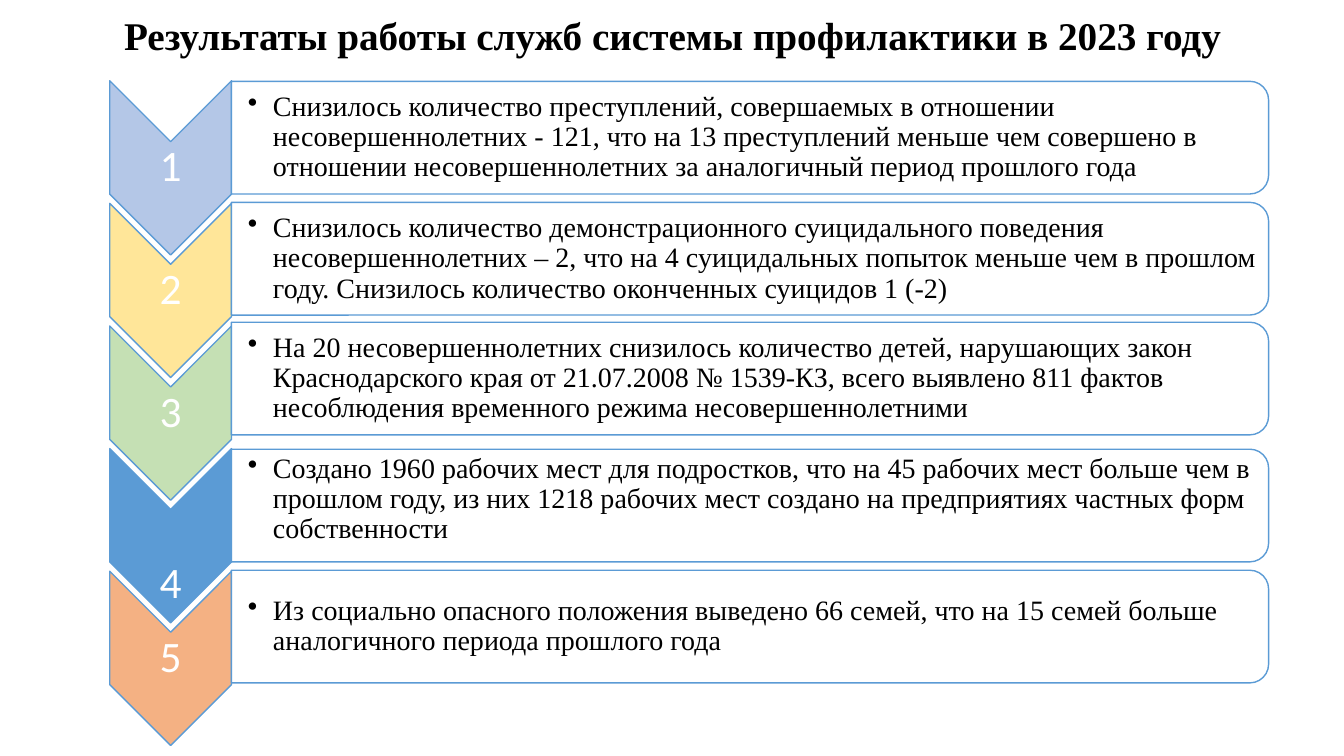
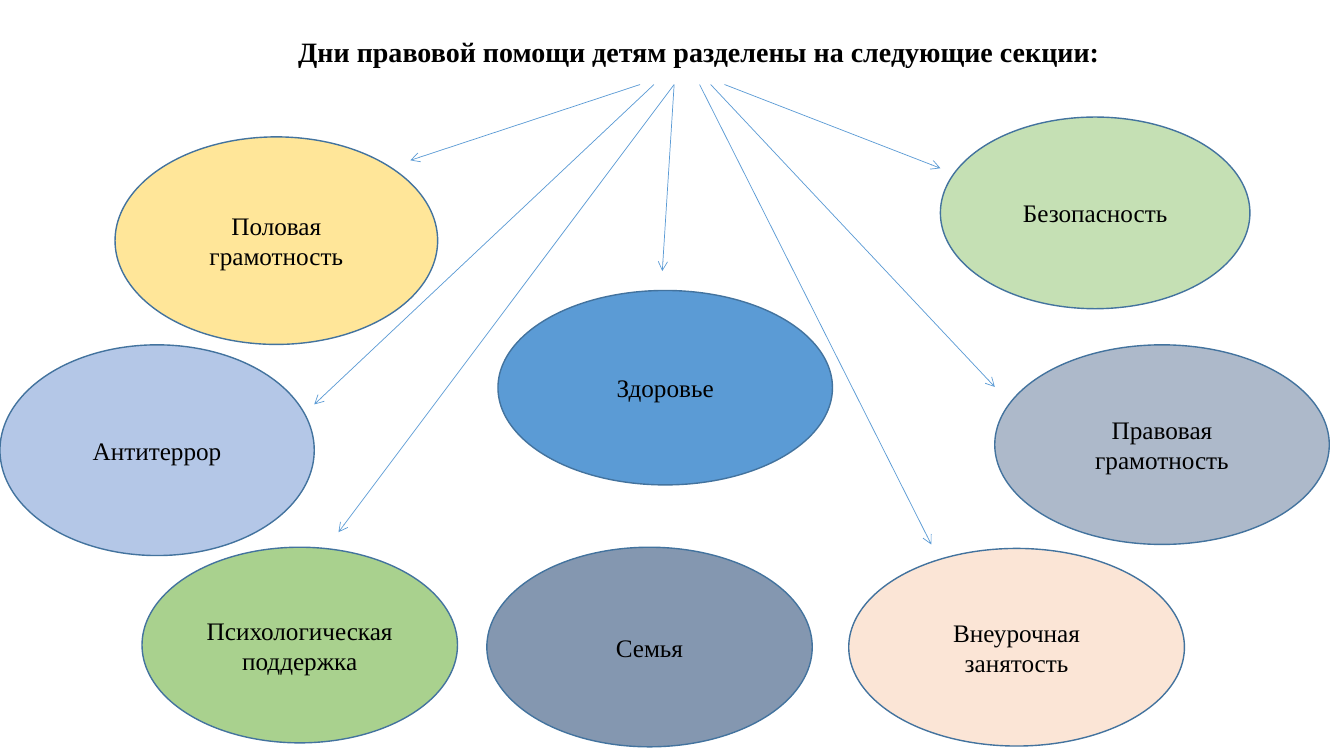
import dataclasses
import typing

import lxml.etree
import pptx
import pptx.dml.color
import pptx.enum.shapes
import pptx.enum.text
import pptx.oxml.ns
import pptx.util

Cm = pptx.util.Cm
Pt = pptx.util.Pt
Shape = pptx.enum.shapes.MSO_SHAPE
Align = pptx.enum.text.PP_ALIGN
Anchor = pptx.enum.text.MSO_ANCHOR
qualified = pptx.oxml.ns.qn


@dataclasses.dataclass(frozen=True)
class Theme:
    text_font: str = "Times New Roman"
    number_font: str = "Calibri"
    black: str = "000000"
    white: str = "FFFFFF"
    blue: str = "5B9BD5"
    dark_blue: str = "43739E"
    lavender: str = "B4C7E7"
    yellow: str = "FFE699"
    light_green: str = "C5E0B4"
    green: str = "A9D18E"
    orange: str = "F4B183"
    peach: str = "FBE5D6"
    light_slate: str = "ADB9CA"
    slate: str = "8497B0"
    title_size: float = 28
    body_size: float = 20
    number_size: float = 31
    section_size: float = 18
    outline_width: float = 1
    arrow_width: float = 0.5


THEME = Theme()


class Box(typing.NamedTuple):
    left: float
    top: float
    width: float
    height: float

    def lengths(self) -> list[pptx.util.Length]:
        return [Cm(value) for value in self]


def centred_box(x: float, y: float, width: float, height: float) -> Box:
    return Box(x - width / 2, y - height / 2, width, height)


class TextStyle(typing.NamedTuple):
    size: float
    font: str = THEME.text_font
    color: str = THEME.black
    bold: bool = False
    alignment: Align = Align.CENTER
    line_spacing: float = 1.0
    insets: tuple[float, float, float, float] = (0.25, 0.13, 0.25, 0.13)
    bullet_indent: float = 0


TITLE = TextStyle(THEME.title_size, bold=True, line_spacing=0.9)
SUBTITLE = TextStyle(THEME.body_size, bold=True)
SECTION = TextStyle(THEME.section_size)
NUMBER = TextStyle(THEME.number_size, THEME.number_font, THEME.white,
                   line_spacing=0.9, insets=(0.05, 0.05, 0.05, 0.05))
RESULT = TextStyle(THEME.body_size, alignment=Align.LEFT, line_spacing=0.9,
                   insets=(0.41, 0.03, 0.03, 0.03), bullet_indent=0.63)


class Result(typing.NamedTuple):
    text: str
    color: str
    card_y: float
    number_shift: float = 0
    text_shift: float = 0


class Section(typing.NamedTuple):
    text: str
    color: str
    box: Box


class Arrow(typing.NamedTuple):
    start_x: float
    end_x: float
    end_y: float


RESULTS = [
    Result("Снизилось количество преступлений, совершаемых в отношении "
           "несовершеннолетних - 121, что на 13 преступлений меньше чем совершено в "
           "отношении несовершеннолетних за аналогичный период прошлого года",
           THEME.lavender, 3.47),
    Result("Снизилось количество демонстрационного суицидального поведения "
           "несовершеннолетних – 2, что на 4 суицидальных попыток меньше чем в прошлом "
           "году. Снизилось количество оконченных суицидов 1 (-2)",
           THEME.yellow, 6.52),
    Result("На 20 несовершеннолетних снизилось количество детей, нарушающих закон "
           "Краснодарского края от 21.07.2008 № 1539-КЗ, всего выявлено 811 фактов "
           "несоблюдения временного режима несовершеннолетними",
           THEME.light_green, 9.54),
    Result("Создано 1960 рабочих мест для подростков, что на 45 рабочих мест больше чем в "
           "прошлом году, из них 1218 рабочих мест создано на предприятиях частных форм "
           "собственности",
           THEME.blue, 12.74, number_shift=1.23, text_shift=-0.15),
    Result("Из социально опасного положения выведено 66 семей, что на 15 семей больше "
           "аналогичного периода прошлого года",
           THEME.orange, 15.79),
]

SECTIONS = [
    Section("Безопасность", THEME.light_green, Box(23.7, 2.95, 7.8, 4.83)),
    Section("Правовая грамотность", THEME.light_slate, Box(25.07, 8.69, 8.43, 5.03)),
    Section("Внеурочная занятость", THEME.peach, Box(21.39, 13.82, 8.46, 4.98)),
    Section("Здоровье", THEME.blue, Box(12.55, 7.32, 8.43, 4.9)),
    Section("Семья", THEME.slate, Box(12.27, 13.79, 8.2, 5.03)),
    Section("Половая грамотность", THEME.yellow, Box(2.9, 3.45, 8.13, 5.23)),
    Section("Психологическая поддержка", THEME.green, Box(3.58, 13.79, 7.95, 4.93)),
    Section("Антитеррор", THEME.lavender, Box(0, 8.69, 7.92, 5.31)),
]

ARROWS = [
    Arrow(16.13, 10.34, 4.04),
    Arrow(16.48, 7.92, 10.19),
    Arrow(16.99, 8.53, 13.41),
    Arrow(16.99, 16.69, 6.83),
    Arrow(17.63, 23.47, 13.72),
    Arrow(17.91, 25.07, 9.75),
    Arrow(18.26, 23.7, 4.24),
]
ARROW_TOP = 2.13

CHEVRON_X = 4.3
CHEVRON_TOP_Y = 4.23
CHEVRON_STEP = 3.09
CHEVRON_LENGTH = 4.39
CHEVRON_WIDTH = 3.07
CARD_X = 18.9
CARD_WIDTH = 26.14
CARD_HEIGHT = 2.84
CARD_OPACITY = 90


def apply_formats(target: typing.Any, formats: dict[str, typing.Any]) -> None:
    for name, value in formats.items():
        setattr(target, name, value)


def rgb(color: str) -> pptx.dml.color.RGBColor:
    return pptx.dml.color.RGBColor.from_string(color)


def write_text(shape, text: str, style: TextStyle) -> None:
    left, top, right, bottom = map(Cm, style.insets)
    apply_formats(shape.text_frame, {
        "word_wrap": True, "vertical_anchor": Anchor.MIDDLE,
        "margin_left": left, "margin_top": top,
        "margin_right": right, "margin_bottom": bottom,
    })
    paragraph = shape.text_frame.paragraphs[0]
    paragraph.text = text
    apply_formats(paragraph, {"alignment": style.alignment,
                              "line_spacing": style.line_spacing})
    if style.bullet_indent:
        properties = paragraph._p.get_or_add_pPr()
        indent = Cm(style.bullet_indent)
        properties.set("marL", str(indent))
        properties.set("indent", str(-indent))
        lxml.etree.SubElement(properties, qualified("a:buChar"), char="•")
    font = paragraph.runs[0].font
    apply_formats(font, {"name": style.font, "size": Pt(style.size), "bold": style.bold})
    font.color.rgb = rgb(style.color)


def add_text(slide, box: Box, text: str, style: TextStyle) -> None:
    write_text(slide.shapes.add_textbox(*box.lengths()), text, style)


def add_figure(slide, kind: Shape, box: Box, fill: str, outline: str,
               rotation: float = 0, opacity: int = 100):
    shape = slide.shapes.add_shape(kind, *box.lengths())
    shape.rotation = rotation
    shape.shadow.inherit = False
    shape.fill.solid()
    shape.fill.fore_color.rgb = rgb(fill)
    if opacity < 100:
        color = shape._element.spPr.find(".//" + qualified("a:srgbClr"))
        lxml.etree.SubElement(color, qualified("a:alpha"), val=str(opacity * 1000))
    shape.line.color.rgb = rgb(outline)
    shape.line.width = Pt(THEME.outline_width)
    return shape


def add_arrow(slide, arrow: Arrow) -> None:
    connector = slide.shapes.add_connector(
        pptx.enum.shapes.MSO_CONNECTOR.STRAIGHT,
        Cm(arrow.start_x), Cm(ARROW_TOP), Cm(arrow.end_x), Cm(arrow.end_y))
    connector.line.color.rgb = rgb(THEME.blue)
    connector.line.width = Pt(THEME.arrow_width)
    lxml.etree.SubElement(connector.line._get_or_add_ln(), qualified("a:tailEnd"), type="arrow")
    lxml.etree.SubElement(connector._element.spPr, qualified("a:effectLst"))


def add_result(slide, index: int, result: Result) -> None:
    chevron_y = CHEVRON_TOP_Y + index * CHEVRON_STEP
    add_figure(slide, Shape.CHEVRON,
               centred_box(CHEVRON_X, chevron_y, CHEVRON_LENGTH, CHEVRON_WIDTH),
               result.color, THEME.blue, rotation=90)
    add_text(slide, centred_box(CHEVRON_X, chevron_y + result.number_shift, CHEVRON_WIDTH, 1.32),
             str(index + 1), NUMBER)
    add_figure(slide, Shape.ROUND_2_SAME_RECTANGLE,
               centred_box(CARD_X, result.card_y, CARD_HEIGHT, CARD_WIDTH),
               THEME.white, THEME.blue, rotation=90, opacity=CARD_OPACITY)
    add_text(slide, Box(5.84, result.card_y + result.text_shift - 1.28, 26.01, 2.56),
             result.text, RESULT)


def build_results(slide) -> None:
    add_text(slide, Box(2.34, 0.23, 29.21, 1.45),
             "Результаты работы служб системы профилактики в 2023 году", TITLE)
    for index, result in enumerate(RESULTS):
        add_result(slide, index, result)


def build_sections(slide) -> None:
    add_text(slide, Box(3.2, 0.74, 28.83, 1.12),
             "Дни правовой помощи детям разделены на следующие секции:", SUBTITLE)
    for section in SECTIONS:
        ellipse = add_figure(slide, Shape.OVAL, section.box, section.color, THEME.dark_blue)
        write_text(ellipse, section.text, SECTION)
    for arrow in ARROWS:
        add_arrow(slide, arrow)


def main() -> None:
    presentation = pptx.Presentation()
    apply_formats(presentation, {"slide_width": Cm(33.87), "slide_height": Cm(19.05)})
    blank_layout = presentation.slide_layouts[6]
    for build in (build_results, build_sections):
        build(presentation.slides.add_slide(blank_layout))
    presentation.save("out.pptx")


if __name__ == "__main__":
    main()
